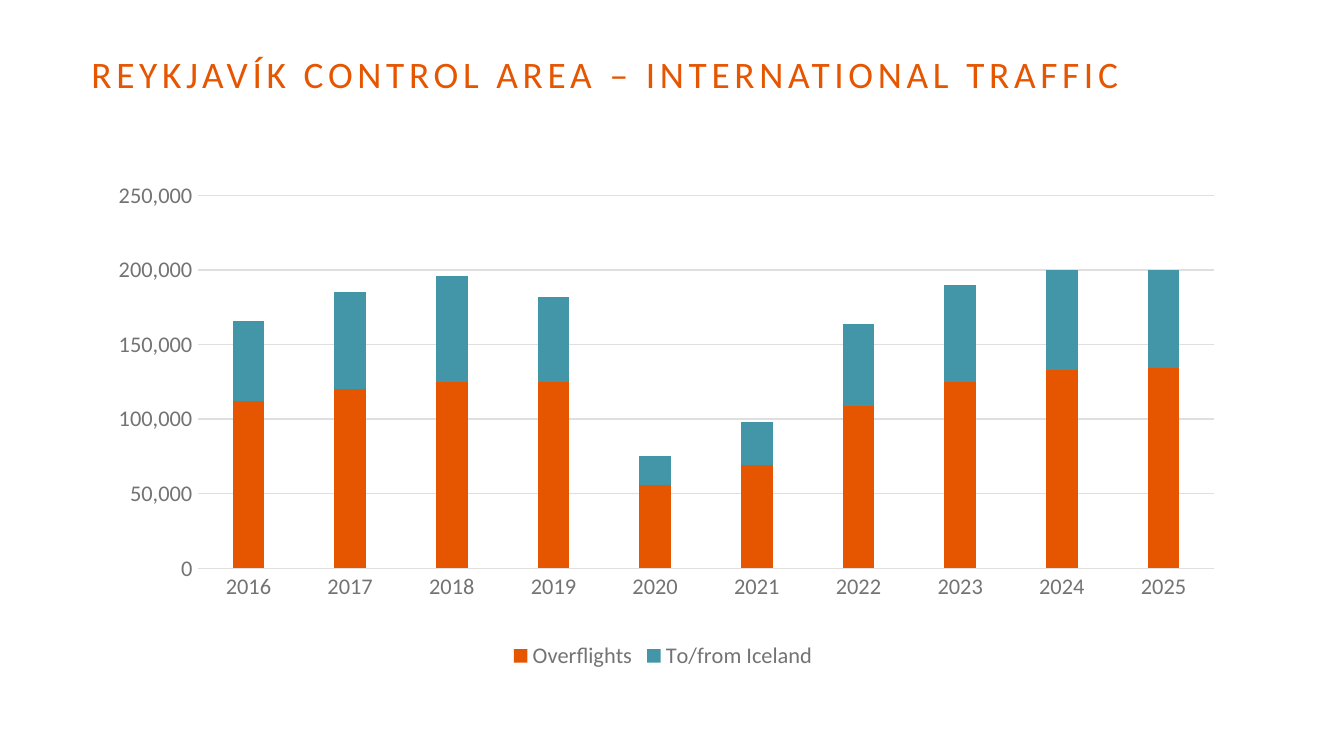
from lxml.etree import SubElement
from pptx import Presentation
from pptx.chart.data import CategoryChartData as ChartData
from pptx.dml.color import RGBColor
from pptx.enum.chart import XL_CHART_TYPE as Kind, XL_LEGEND_POSITION as Side, XL_TICK_MARK as Tick
from pptx.enum.text import MSO_ANCHOR as Anchor, MSO_AUTO_SIZE as Fit, PP_ALIGN as Align
from pptx.oxml.ns import qn
from pptx.util import Inches, Pt

TITLE = "REYKJAVÍK CONTROL AREA – INTERNATIONAL TRAFFIC"
YEARS = [str(year) for year in range(2016, 2026)]
SERIES = [  # name, colour, flights in thousands
    ("Overflights", "E65500", [112, 120, 125, 125, 56, 69, 109, 125, 133, 134]),
    ("To/from Iceland", "4396A7", [54, 65, 71, 57, 19, 29, 55, 65, 67, 66]),
]
ORANGE, GREY, RULE, INK = "E65500", "737373", "DFDFDF", "272727"
FONT = "Calibri"
WIDE = 10
HIGH = WIDE * 9 / 16
LEFT = 0.68
TITLE_BOX = (LEFT, 0.2, 8.38, 0.67)
CHART_BOX = (LEFT, 1.31, 8.51, 3.71)
PLOT = {"x": 0.093, "y": 0.039, "w": 0.889, "h": 0.748}  # shares of the chart


def put(item, values):
    for name, value in values.items():
        setattr(item, name, value)


def tint(value):
    return RGBColor.from_string(value)


def style(font, size, color):
    put(font, {"name": FONT, "size": Pt(size), "bold": False})
    font.color.rgb = tint(color)


def rule(line):
    line.color.rgb = tint(RULE)
    line.width = Pt(0.75)


def add_title(slide):
    title = slide.shapes.title
    box = map(Inches, TITLE_BOX)
    put(title, dict(zip(("left", "top", "width", "height"), box)))
    frame = title.text_frame
    put(frame, {"text": TITLE, "word_wrap": True, "auto_size": Fit.NONE,
                "vertical_anchor": Anchor.MIDDLE, "margin_left": 0,
                "margin_right": 0, "margin_top": 0, "margin_bottom": 0})
    para = frame.paragraphs[0]
    put(para, {"alignment": Align.LEFT, "line_spacing": Pt(26)})
    run = para.runs[0]
    style(run.font, 20, ORANGE)
    run._r.get_or_add_rPr().set("spc", "250")


def set_plot(chart):
    """Fix the inner plot area at its shares of the chart."""
    area = chart._chartSpace.chart.plotArea
    for old in area.findall(qn("c:layout")):
        area.remove(old)
    layout = SubElement(area, qn("c:layout"))
    area.insert(0, layout)
    manual = SubElement(layout, qn("c:manualLayout"))
    parts = {"layoutTarget": "inner", "xMode": "edge", "yMode": "edge", **PLOT}
    for tag, value in parts.items():
        SubElement(manual, qn(f"c:{tag}")).set("val", str(value))


def add_chart(slide):
    data = ChartData(number_format="#,##0")
    data.categories = YEARS
    for name, _, counts in SERIES:
        data.add_series(name, [count * 1000 for count in counts])
    chart = slide.shapes.add_chart(
        Kind.COLUMN_STACKED, *map(Inches, CHART_BOX), data).chart
    put(chart, {"has_title": False, "has_legend": True})
    style(chart.font, 10, INK)
    put(chart.legend, {"position": Side.BOTTOM, "include_in_layout": False})
    style(chart.legend.font, 12, GREY)

    plot = chart.plots[0]
    put(plot, {"gap_width": 219, "overlap": 100, "vary_by_categories": False})
    for series, (_, color, _) in zip(plot.series, SERIES):
        series.format.fill.solid()
        series.format.fill.fore_color.rgb = tint(color)

    years, flights = chart.category_axis, chart.value_axis
    for axis in (years, flights):
        put(axis, {"major_tick_mark": Tick.NONE, "minor_tick_mark": Tick.NONE})
        style(axis.tick_labels.font, 12, GREY)
    rule(years.format.line)
    put(flights, {"minimum_scale": 0, "maximum_scale": 250000,
                  "major_unit": 50000, "has_major_gridlines": True})
    flights.format.line.fill.background()
    rule(flights.major_gridlines.format.line)
    put(flights.tick_labels, {"number_format": "#,##0",
                              "number_format_is_linked": False})
    set_plot(chart)


def main():
    deck = Presentation()
    put(deck, {"slide_width": Inches(WIDE), "slide_height": Inches(HIGH)})
    slide = deck.slides.add_slide(deck.slide_layouts.get_by_name("Title Only"))
    add_title(slide)
    add_chart(slide)
    deck.save("out.pptx")


if __name__ == "__main__":
    main()
